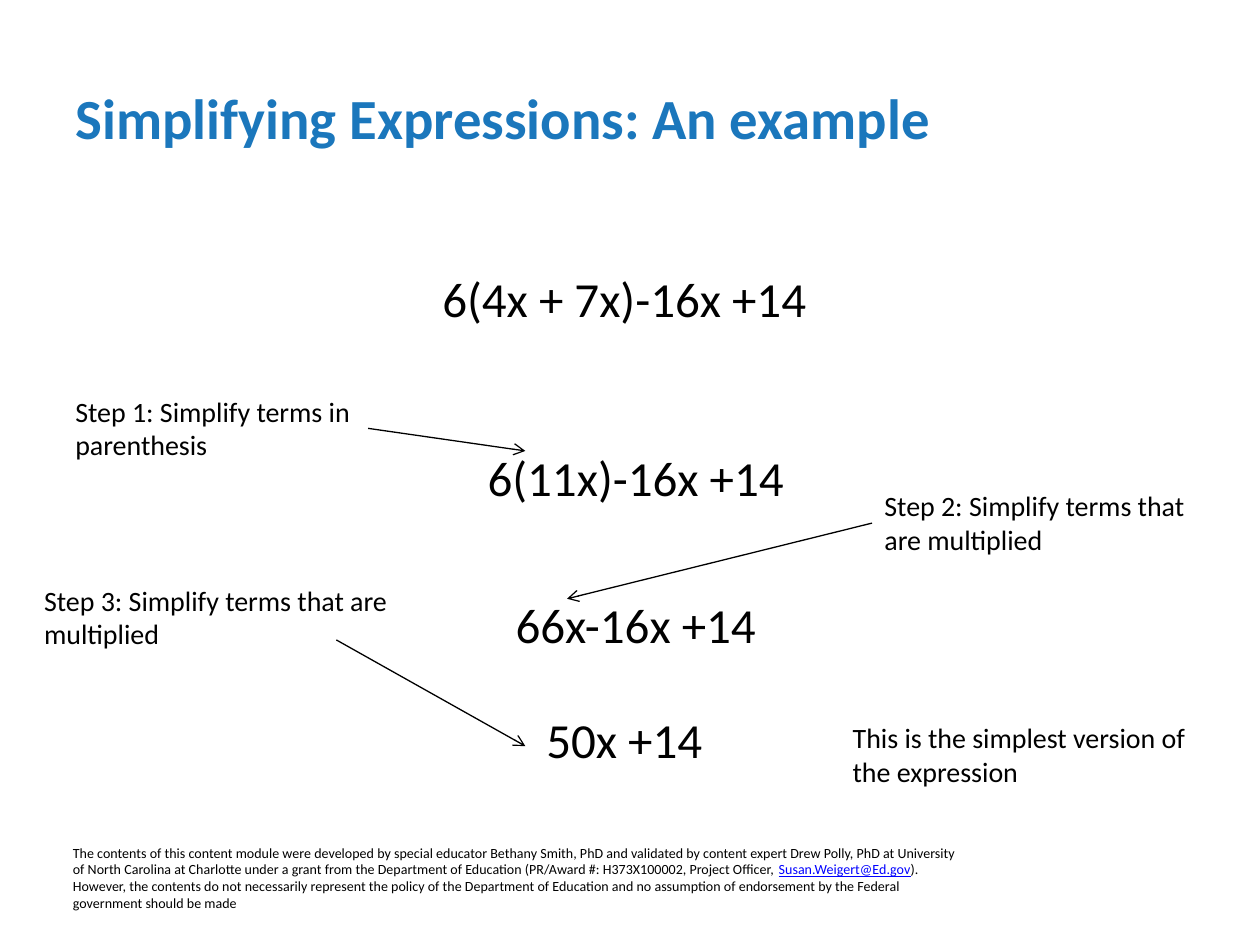
from typing import NamedTuple, Optional

from lxml.etree import SubElement
from pptx import Presentation
from pptx.dml.color import RGBColor
from pptx.enum.shapes import MSO_CONNECTOR as Conn
from pptx.enum.text import MSO_ANCHOR as Anchor, MSO_AUTO_SIZE as Fit, PP_ALIGN as Align
from pptx.oxml.ns import qn
from pptx.util import Cm, Pt

FONT = "Calibri"
HUES = {"title": "1B77BC", "text": "000000", "link": "0000FF"}


class Label(NamedTuple):
    text: str
    x: float
    y: float
    w: float


class Arrow(NamedTuple):
    start: tuple
    end: tuple
    step: Optional[int] = None  # index of the note it leaves
    side: int = 0


# Lengths in centimetres
SUMS = [
    Label("6(4x + 7x)-16x +14", 5.92, 5.28, 13.33),
    Label("6(11x)-16x +14", 6.15, 8.89, 13.33),
    Label("66x-16x +14", 6.15, 11.86, 13.33),
    Label("50x +14", 5.92, 14.17, 13.33),
]
NOTES = [
    Label("Step 1: Simplify terms in parenthesis", 1.27, 7.82, 6.15),
    Label("Step 2: Simplify terms that are multiplied", 17.58, 9.73, 6.98),
    Label("Step 3: Simplify terms that are multiplied", 0.64, 11.63, 7.62),
    Label("This is the simplest version of the expression", 16.94, 14.4, 7.62),
]
ARROWS = [
    Arrow((7.42, 8.64), (10.59, 9.09), 0, 3),
    Arrow((17.58, 10.54), (11.43, 12.07), 1, 1),
    Arrow((6.78, 12.9), (10.59, 15.04)),
]
CREDIT = [
    ("The contents of this content module were developed by special educator "
     "Bethany Smith, PhD and validated by content expert Drew Polly, PhD at "
     "University of North Carolina at Charlotte under a grant from the Department "
     "of Education (PR/Award #: H373X100002, Project Officer, ", "text"),
    ("Susan.Weigert@Ed.gov", "link"),
    ("). However, the contents do not necessarily represent the policy of the "
     "Department of Education and no assumption of endorsement by the Federal "
     "government should be made", "text"),
]


def add_run(para, text: str, size: float, hue: str = "text"):
    run = para.add_run()
    run.text = text
    run.font.name = FONT
    run.font.size = Pt(size)
    run.font.color.rgb = RGBColor.from_string(HUES[hue])
    return run


def add_box(slide, x: float, y: float, w: float, h: float):
    box = slide.shapes.add_textbox(Cm(x), Cm(y), Cm(w), Cm(h))
    box.text_frame.word_wrap = True
    return box


def add_label(slide, item: Label, h: float, size: float, align):
    box = add_box(slide, item.x, item.y, item.w, h)
    box.text_frame.auto_size = Fit.SHAPE_TO_FIT_TEXT
    para = box.text_frame.paragraphs[0]
    para.alignment = align
    add_run(para, item.text, size)
    return box


def add_arrow(slide, item: Arrow, boxes: list) -> None:
    ends = [Cm(n) for n in item.start + item.end]
    line = slide.shapes.add_connector(Conn.STRAIGHT, *ends)
    if item.step is not None:
        line.begin_connect(boxes[item.step], item.side)
    line.line.width = Pt(0.75)
    line.line.color.rgb = RGBColor.from_string(HUES["text"])
    SubElement(line.line._get_or_add_ln(), qn("a:tailEnd"), type="arrow")
    SubElement(line._element.spPr, qn("a:effectLst"))


def main() -> None:
    deck = Presentation()
    deck.slide_width, deck.slide_height = Cm(25.4), Cm(19.05)
    slide = deck.slides.add_slide(deck.slide_layouts[5])

    # Title
    title = slide.shapes.title
    title.left, title.top = Cm(1.27), Cm(0.76)
    title.width, title.height = Cm(22.86), Cm(3.18)
    frame = title.text_frame
    frame.auto_size = Fit.NONE
    frame.vertical_anchor = Anchor.MIDDLE
    para = frame.paragraphs[0]
    para.alignment = Align.LEFT
    add_run(para, "Simplifying Expressions: An example", 32.4, "title").font.bold = True

    # Expressions, from first to simplest
    for item in SUMS:
        add_label(slide, item, 1.45, 28, Align.CENTER)

    # Credit line
    frame = add_box(slide, 1.47, 17.35, 17.98, 1.02).text_frame
    frame.margin_left = frame.margin_right = frame.margin_top = frame.margin_bottom = 0
    frame.vertical_anchor = Anchor.BOTTOM
    for text, hue in CREDIT:
        run = add_run(frame.paragraphs[0], text, 8, hue)
        run.font.underline = hue == "link"

    # Step notes and their arrows
    boxes = [add_label(slide, item, 1.63, 16, Align.LEFT) for item in NOTES]
    for item in ARROWS:
        add_arrow(slide, item, boxes)

    deck.save("out.pptx")


if __name__ == "__main__":
    main()
